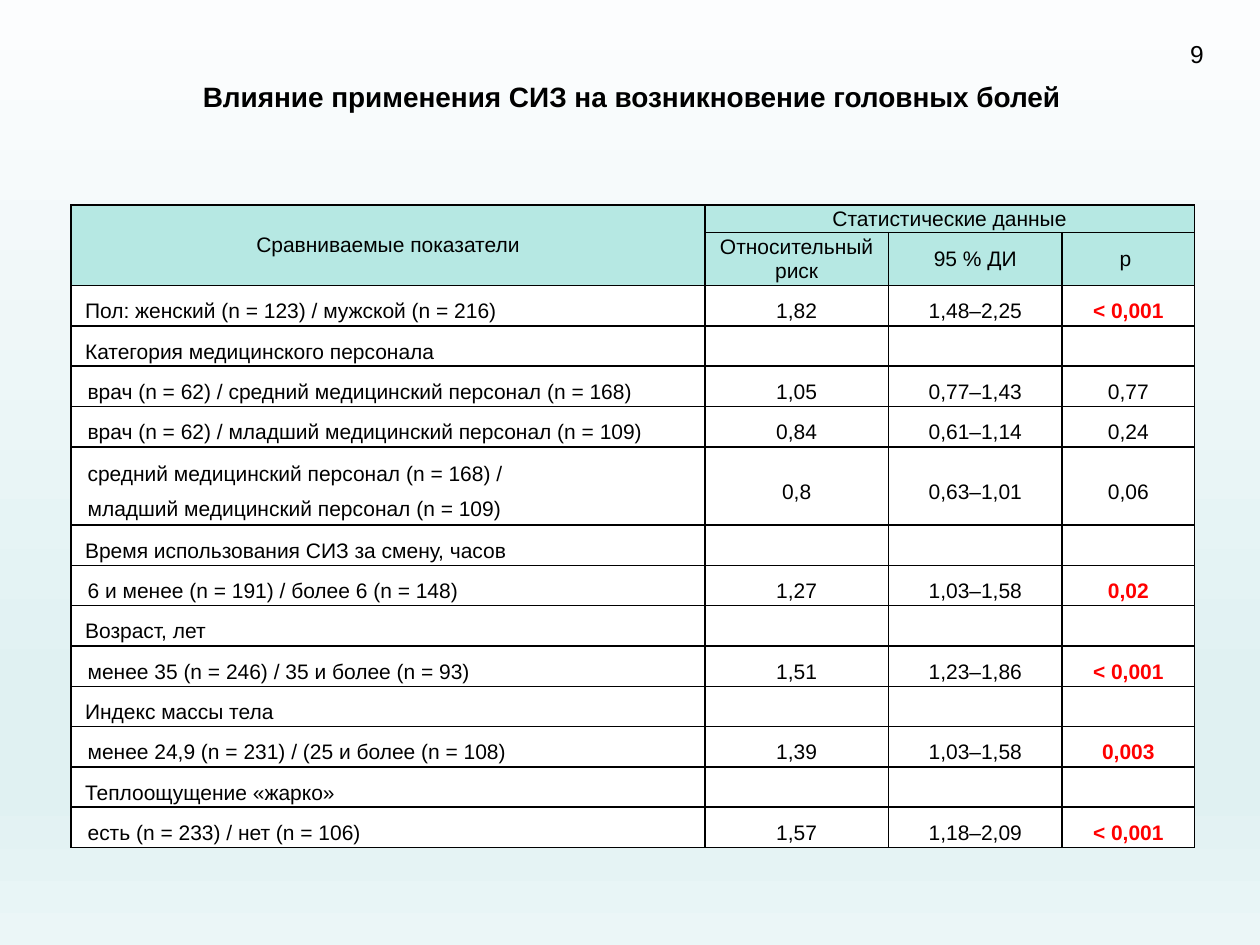
from dataclasses import dataclass

from lxml.etree import SubElement
from pptx import Presentation
from pptx.dml.color import RGBColor
from pptx.enum.text import MSO_ANCHOR as Anchor, PP_ALIGN as Align
from pptx.oxml.ns import qn
from pptx.util import Pt

COLORS = {"text": "000000", "accent": "FF0000", "head": "B6E8E3",
          "body": "FFFFFF", "border": "000000"}
BACKGROUND = [(0, "FCFDFE"), (74, "E0F1F2"), (83, "E0F1F2"), (100, "EBF6F7")]
COLUMNS = [362.1, 104.9, 99.3, 75.6]
HEAD_HEIGHTS = [15.7, 30.3]
ROW_HEIGHT, TALL_ROW_HEIGHT = 23.04, 44.6
GROUP_INDENT, ITEM_INDENT = 7.2, 8.64
INSET = 0.72


@dataclass
class Row:
    label: str
    risk: str = ""
    interval: str = ""
    p_value: str = ""
    significant: bool = False
    indent: float = ITEM_INDENT


ROWS = [
    Row("Пол: женский (n = 123) / мужской (n = 216)",
        "1,82", "1,48–2,25", "< 0,001", True, GROUP_INDENT),
    Row("Категория медицинского персонала", indent=GROUP_INDENT),
    Row("врач (n = 62) / средний медицинский персонал (n = 168)",
        "1,05", "0,77–1,43", "0,77"),
    Row("врач (n = 62) / младший медицинский персонал (n = 109)",
        "0,84", "0,61–1,14", "0,24"),
    Row("средний медицинский персонал (n = 168) / \n"
        "младший медицинский персонал (n = 109)",
        "0,8", "0,63–1,01", "0,06"),
    Row("Время использования СИЗ за смену, часов", indent=GROUP_INDENT),
    Row("6 и менее (n = 191) / более 6 (n = 148)",
        "1,27", "1,03–1,58", "0,02", True),
    Row("Возраст, лет", indent=GROUP_INDENT),
    Row("менее 35 (n = 246) / 35 и более (n = 93)",
        "1,51", "1,23–1,86", "< 0,001", True),
    Row("Индекс массы тела", indent=GROUP_INDENT),
    Row("менее 24,9 (n = 231) / (25 и более (n = 108)",
        "1,39", "1,03–1,58", "0,003", True),
    Row("Теплоощущение «жарко»", indent=GROUP_INDENT),
    Row("есть (n = 233) / нет (n = 106)",
        "1,57", "1,18–2,09", "< 0,001", True),
]


def write(tf, text: str, *, size: float = 12, bold: bool = False,
          color: str = "text", align=Align.CENTER, spacing: float = 1.0,
          indent: float = 0) -> None:
    """Put text into a frame, one paragraph per line."""
    for i, line in enumerate(text.split("\n")):
        p = tf.add_paragraph() if i else tf.paragraphs[0]
        p.alignment, p.line_spacing = align, spacing
        if indent:
            p._p.get_or_add_pPr().set("indent", str(Pt(indent)))
        if not line:
            # An empty cell still needs its font size to keep the row low
            SubElement(p._p, qn("a:endParaRPr")).set("sz", str(int(size * 100)))
            continue
        r = p.add_run()
        r.text = line
        r.font.name, r.font.size, r.font.bold = "Arial", Pt(size), bold
        r.font.color.rgb = RGBColor.from_string(COLORS[color])


def add_text(s, text: str, left: float, top: float, width: float,
             height: float, **fmt) -> None:
    tf = s.shapes.add_textbox(Pt(left), Pt(top), Pt(width), Pt(height)).text_frame
    tf.word_wrap = True
    write(tf, text, **fmt)


def style_cell(cell, fill: str) -> None:
    """Set insets, borders and fill of a table cell."""
    cell.vertical_anchor = Anchor.MIDDLE
    cell.margin_left = cell.margin_right = Pt(INSET)
    cell.margin_top = cell.margin_bottom = Pt(INSET)
    tc_pr = cell._tc.get_or_add_tcPr()
    for side in ("lnL", "lnR", "lnT", "lnB"):
        ln = SubElement(tc_pr, qn(f"a:{side}"), w=str(Pt(1)))
        solid = SubElement(ln, qn("a:solidFill"))
        SubElement(solid, qn("a:srgbClr"), val=COLORS["border"])
    cell.fill.solid()
    cell.fill.fore_color.rgb = RGBColor.from_string(COLORS[fill])


def set_background(s) -> None:
    fill = s.background.fill
    fill.gradient()
    fill.gradient_angle = 270
    stops = next(s._element.iter(qn("a:gsLst")))
    for stop in list(stops):
        stops.remove(stop)
    for position, color in BACKGROUND:
        stop = SubElement(stops, qn("a:gs"), pos=str(position * 1000))
        SubElement(stop, qn("a:srgbClr"), val=color)


def add_results_table(s, left: float, top: float) -> None:
    heights = HEAD_HEIGHTS + [TALL_ROW_HEIGHT if "\n" in row.label else ROW_HEIGHT
                              for row in ROWS]
    table = s.shapes.add_table(len(heights), len(COLUMNS), Pt(left), Pt(top),
                               Pt(sum(COLUMNS)), Pt(sum(heights))).table
    for column, width in zip(table.columns, COLUMNS):
        column.width = Pt(width)
    for i, height in enumerate(heights):
        table.rows[i].height = Pt(height)
        for cell in table.rows[i].cells:
            style_cell(cell, "head" if i < len(HEAD_HEIGHTS) else "body")

    # Two-level header
    table.cell(0, 0).merge(table.cell(1, 0))
    table.cell(0, 1).merge(table.cell(0, 3))
    write(table.cell(0, 0).text_frame, "Сравниваемые показатели")
    write(table.cell(0, 1).text_frame, "Статистические данные")
    for j, text in enumerate(["Относительный риск", "95 % ДИ", "p "], start=1):
        write(table.cell(1, j).text_frame, text)

    # Compared groups and their statistics
    for i, row in enumerate(ROWS, start=len(HEAD_HEIGHTS)):
        label, risk, interval, p_value = [c.text_frame for c in table.rows[i].cells]
        write(label, row.label, align=Align.JUSTIFY, spacing=1.5, indent=row.indent)
        write(risk, row.risk, spacing=1.5)
        write(interval, row.interval, spacing=1.5)
        write(p_value, row.p_value, spacing=1.5, bold=row.significant,
              color="accent" if row.significant else "text")


def main() -> None:
    prs = Presentation()
    prs.slide_width, prs.slide_height = Pt(720), Pt(540)
    s = prs.slides.add_slide(prs.slide_layouts[6])
    set_background(s)

    # Title and page number
    add_text(s, "Влияние применения СИЗ на возникновение головных болей",
             23.8, 41.8, 674.6, 26.6, size=16, bold=True)
    add_text(s, "9", 666.7, 18.7, 34.6, 22.3, size=14)

    add_results_table(s, 40.7, 117)
    prs.save("out.pptx")


if __name__ == "__main__":
    main()
